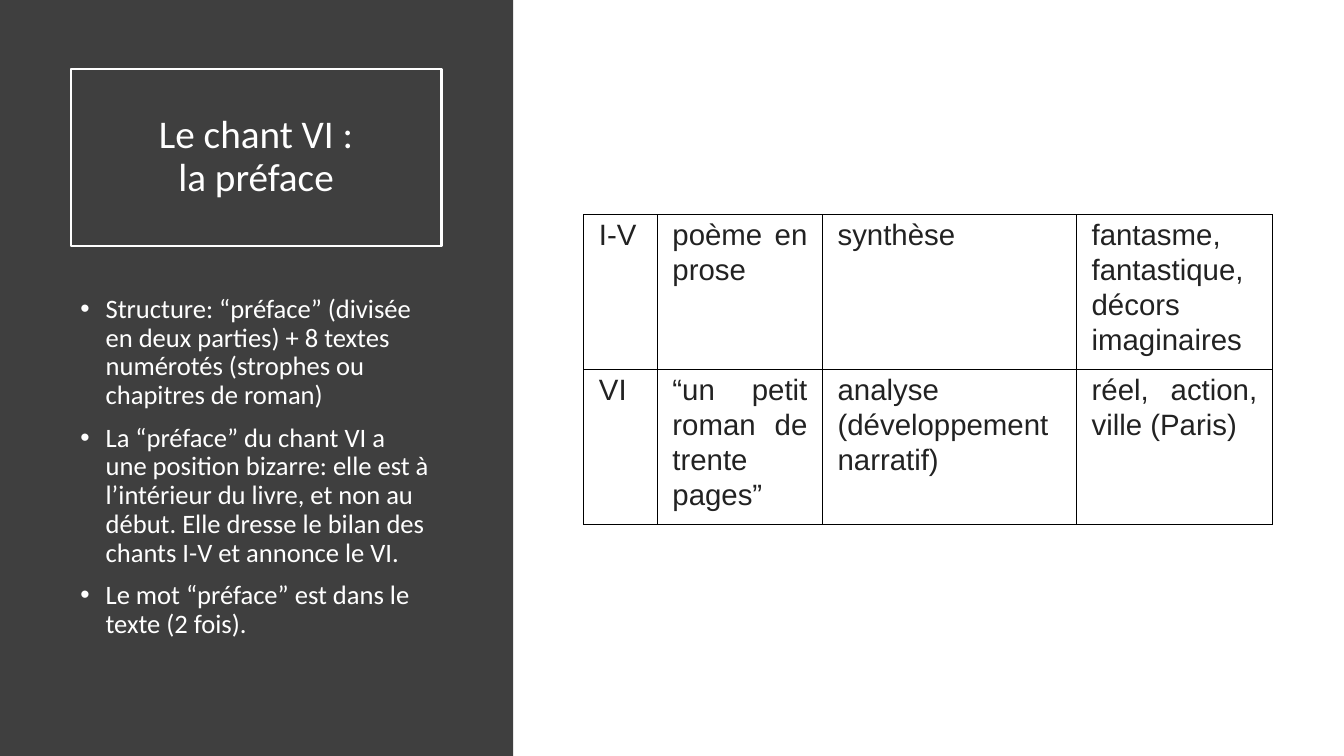
from lxml import etree
from pptx import Presentation
from pptx.dml.color import RGBColor
from pptx.enum.shapes import MSO_SHAPE
from pptx.enum.text import MSO_ANCHOR, MSO_AUTO_SIZE, PP_ALIGN
from pptx.oxml import parse_xml
from pptx.oxml.ns import nsdecls, qn
from pptx.util import Pt

RECTANGLE = MSO_SHAPE.RECTANGLE
MIDDLE = MSO_ANCHOR.MIDDLE
NO_AUTOFIT = MSO_AUTO_SIZE.NONE
CENTER, JUSTIFY, LEFT = PP_ALIGN.CENTER, PP_ALIGN.JUSTIFY, PP_ALIGN.LEFT

WHITE = RGBColor(0xFF, 0xFF, 0xFF)
CHARCOAL = RGBColor(0x3F, 0x3F, 0x3F)
INK = RGBColor(0x22, 0x22, 0x22)
BORDER_HEX = "000000"

PAGE_WIDTH, PAGE_HEIGHT = 960, 540
PANEL_WIDTH = 366.5
TEXT_LEFT, TEXT_WIDTH = 50.4, 265
TITLE_ONLY = 5

POINTS = [
    "Structure: “préface” (divisée en deux parties) + 8 textes numérotés (strophes ou chapitres de roman)",
    "La “préface” du chant VI a une position bizarre: elle est à l’intérieur du livre, et non au début. "
    "Elle dresse le bilan des chants I-V et annonce le VI.",
    "Le mot “préface” est dans le texte (2 fois).",
]
COMPARISON = [
    ["I-V", "poème en prose", "synthèse", "fantasme, fantastique,\ndécors imaginaires"],
    ["VI", "“un petit roman de trente pages”", "analyse (développement narratif)",
     "réel, action, ville (Paris)"],
]
COLUMN_WIDTHS = [52.5, 118, 181.5, 140]
ROW_HEIGHT = 110.6


class SlideBuilder:
    heading_font = "Calibri"
    table_font = "Arial"

    def __init__(self, page):
        self.page = page

    def format_text(self, frame, font, size, color, align, spacing, before=0):
        for para in frame.paragraphs:
            para.alignment = align
            para.line_spacing = spacing
            para.space_before = Pt(before)
            for span in para.runs:
                span.font.name = font
                span.font.size = Pt(size)
                span.font.color.rgb = color

    def panel(self, width, height, color):
        """Draw the side panel behind everything else on the page."""
        shape = self.page.shapes.add_shape(RECTANGLE, 0, 0, Pt(width), Pt(height))
        shape.shadow.inherit = False
        shape.fill.solid()
        shape.fill.fore_color.rgb = color
        shape.line.fill.background()
        self.page.shapes.title.element.addprevious(shape.element)

    def title(self, text, left, top, width, height):
        box = self.page.shapes.title
        box.left, box.top, box.width, box.height = Pt(left), Pt(top), Pt(width), Pt(height)
        box.line.color.rgb = WHITE
        box.line.width = Pt(1.5)
        frame = box.text_frame
        frame.text = text
        frame.word_wrap = True
        frame.auto_size = NO_AUTOFIT
        frame.vertical_anchor = MIDDLE
        self.format_text(frame, self.heading_font, 28, WHITE, CENTER, 0.9)

    def bullets(self, points, left, top, width, height):
        box = self.page.shapes.add_textbox(Pt(left), Pt(top), Pt(width), Pt(height))
        frame = box.text_frame
        frame.word_wrap = True
        frame.text = "\n".join(points)
        self.format_text(frame, self.heading_font, 19, WHITE, LEFT, 0.9, before=10)
        for para in frame.paragraphs:
            properties = para._p.get_or_add_pPr()
            properties.set("marL", str(Pt(18)))
            properties.set("indent", str(-Pt(18)))
            etree.SubElement(properties, qn("a:buFont")).set("typeface", "Arial")
            etree.SubElement(properties, qn("a:buChar")).set("char", "•")

    def table(self, rows, left, top, widths, row_height):
        frame = self.page.shapes.add_table(
            len(rows), len(widths), Pt(left), Pt(top), Pt(sum(widths)), Pt(row_height * len(rows)))
        table = frame.table
        table.first_row = table.horz_banding = False
        for column, width in zip(table.columns, widths):
            column.width = Pt(width)
        for row, texts in zip(table.rows, rows):
            row.height = Pt(row_height)
            for cell, text in zip(row.cells, texts):
                self.cell(cell, text)

    def cell(self, cell, text):
        cell.margin_left = cell.margin_right = Pt(10.8)
        cell.margin_top, cell.margin_bottom = Pt(1.5), 0
        cell.text_frame.text = text
        self.format_text(cell.text_frame, self.table_font, 21, INK, JUSTIFY, 1.07)
        properties = cell._tc.get_or_add_tcPr()
        for side in "LRTB":
            properties.append(parse_xml(
                f'<a:ln{side} {nsdecls("a")} w="{Pt(1)}"><a:solidFill>'
                f'<a:srgbClr val="{BORDER_HEX}"/></a:solidFill></a:ln{side}>'))
        cell.fill.background()


def main():
    deck = Presentation()
    deck.slide_width, deck.slide_height = Pt(PAGE_WIDTH), Pt(PAGE_HEIGHT)
    page = deck.slides.add_slide(deck.slide_layouts[TITLE_ONLY])
    builder = SlideBuilder(page)
    builder.panel(PANEL_WIDTH, PAGE_HEIGHT, CHARCOAL)
    builder.title("Le chant VI :\vla préface", TEXT_LEFT, 49, TEXT_WIDTH, 126.7)
    builder.bullets(POINTS, TEXT_LEFT, 207.4, TEXT_WIDTH, 269.3)
    builder.table(COMPARISON, 417, 153.4, COLUMN_WIDTHS, ROW_HEIGHT)
    deck.save("out.pptx")


if __name__ == "__main__":
    main()
